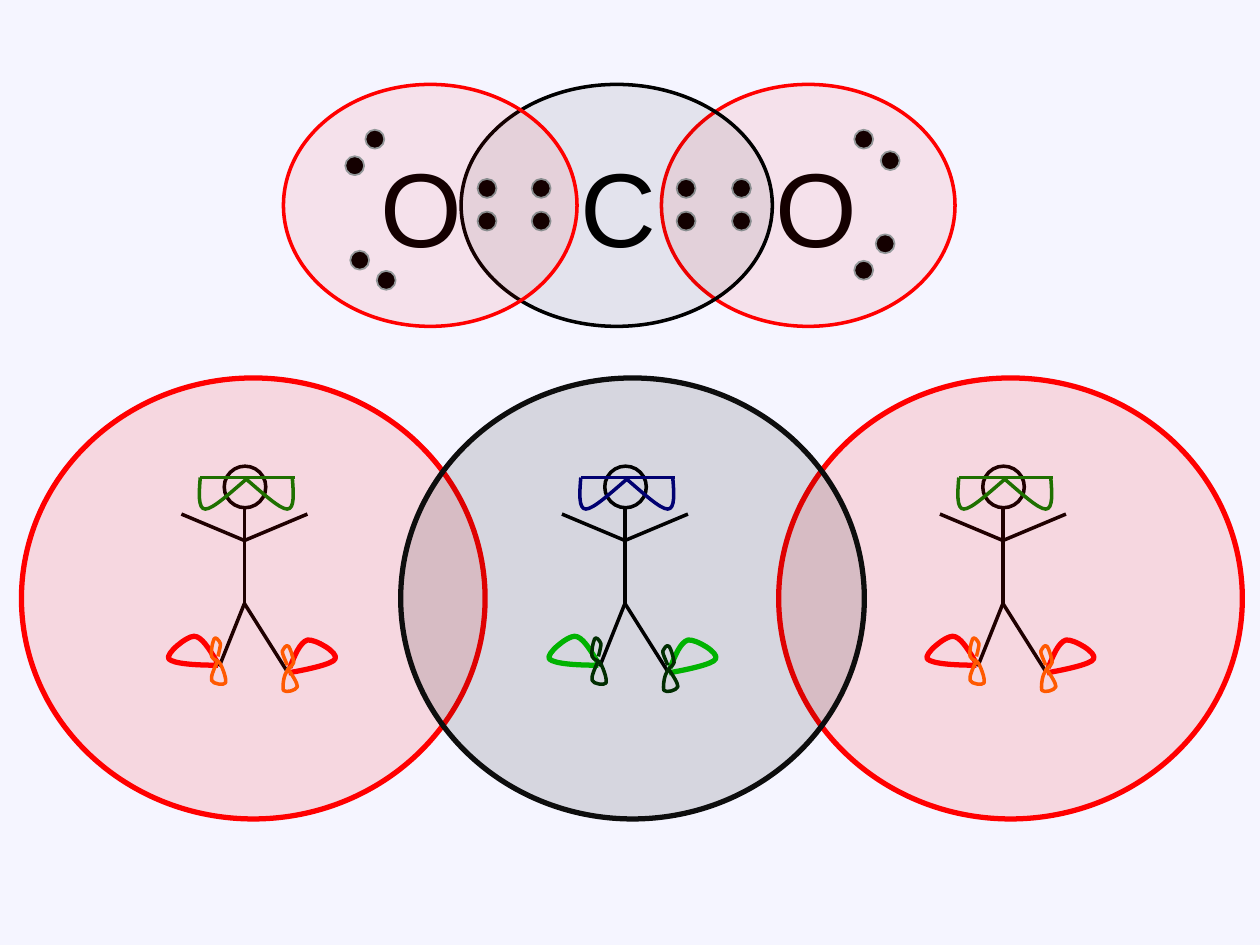
from lxml.etree import SubElement as Sub
from pptx import Presentation
from pptx.dml.color import RGBColor
from pptx.enum.shapes import MSO_CONNECTOR as Conn, MSO_SHAPE as Shape
from pptx.oxml.ns import qn
from pptx.util import Inches, Pt

BACK = RGBColor(0xF5, 0xF5, 0xFF)
BLACK = RGBColor(0, 0, 0)
COAL = RGBColor(0x0D, 0x0D, 0x0D)
RED = RGBColor(0xFF, 0, 0)
GREY = RGBColor(0x8A, 0xA6, 0xA8)
LIME = RGBColor(0, 0xCC, 0)
PINE = RGBColor(0, 0x33, 0)
NAVY = RGBColor(0, 0, 0x80)
ORANGE = RGBColor(0xFF, 0x66, 0)
GREEN = RGBColor(0, 0x80, 0)

LETTERS = [("C", 4.51, 0.81), ("O", 2.92, 0.86), ("O", 6.06, 0.86)]
LONE = [(6.78, 1.03), (6.99, 1.2), (6.95, 1.86), (6.78, 2.07),
        (2.9, 1.03), (2.74, 1.24), (2.99, 2.15), (2.78, 1.99)]
BONDS = [(x, y) for x in (5.37, 5.81, 3.79, 4.22) for y in (1.42, 1.68)]

LIMBS = [((0, 4.04), (0, 4.79)), ((0, 4.79), (0.34, 5.33)),
         ((0, 4.79), (-0.2, 5.29)), ((0, 4.29), (0.5, 4.08)),
         ((0, 4.29), (-0.5, 4.08))]
LENS = [(-0.35, 3.79), (-0.36, 3.91), (-0.37, 4.04), (-0.31, 4.04),
        (-0.25, 4.04), (-0.11, 3.91), (0.03, 3.79)]
SHOES = [
    [(0.36, 5.3), (0.4, 5.2), (0.44, 5.1), (0.5, 5.08), (0.56, 5.07),
     (0.75, 5.18), (0.72, 5.23), (0.7, 5.27), (0.52, 5.31), (0.35, 5.34)],
    [(-0.22, 5.25), (-0.28, 5.15), (-0.34, 5.05), (-0.4, 5.05), (-0.46, 5.05),
     (-0.63, 5.19), (-0.6, 5.23), (-0.56, 5.27), (-0.38, 5.28), (-0.21, 5.28)],
]
BOWS = [
    [(0.34, 5.28), (0.32, 5.23), (0.3, 5.19), (0.3, 5.17), (0.31, 5.15),
     (0.33, 5.11), (0.35, 5.13), (0.36, 5.14), (0.39, 5.22), (0.39, 5.26),
     (0.38, 5.29), (0.34, 5.3), (0.33, 5.34), (0.31, 5.37), (0.3, 5.46),
     (0.31, 5.48), (0.33, 5.5), (0.41, 5.48), (0.42, 5.45), (0.42, 5.42),
     (0.38, 5.36), (0.34, 5.3)],
    [(-0.21, 5.21), (-0.2, 5.17), (-0.19, 5.13), (-0.19, 5.11), (-0.2, 5.08),
     (-0.23, 5.05), (-0.24, 5.07), (-0.25, 5.09), (-0.27, 5.17), (-0.26, 5.21),
     (-0.25, 5.24), (-0.2, 5.24), (-0.19, 5.27), (-0.17, 5.31), (-0.14, 5.39),
     (-0.15, 5.42), (-0.16, 5.44), (-0.25, 5.43), (-0.26, 5.4), (-0.27, 5.37),
     (-0.24, 5.31), (-0.21, 5.24)],
]


def add_oval(shapes, box, ink, width, fill=None, alpha=100):
    """Add an ellipse with an outline and an optional clear fill."""
    oval = shapes.add_shape(Shape.OVAL, *map(Inches, box))
    oval.shadow.inherit = False
    oval.line.color.rgb = ink
    oval.line.width = Pt(width)
    if fill is None:
        oval.fill.background()
        return
    oval.fill.solid()
    oval.fill.fore_color.rgb = fill
    if alpha < 100:
        tint = oval.element.spPr.find(qn("a:solidFill"))[0]
        Sub(tint, qn("a:alpha"), val=str(alpha * 1000))


def add_line(shapes, start, end, ink):
    """Add a straight line between two points."""
    line = shapes.add_connector(Conn.STRAIGHT, *map(Inches, start + end))
    line.line.color.rgb = ink
    line.line.width = Pt(2)
    Sub(line.element.spPr, qn("a:effectLst"))


def add_curve(shapes, points, ink, width):
    """Add an open Bezier outline from a start and triples of points."""
    spots = [(Inches(x), Inches(y)) for x, y in points]
    pen = shapes.build_freeform(*spots[0], scale=1.0)
    pen.add_line_segments(spots[1:], close=False)
    curve = pen.convert_to_shape()
    curve.shadow.inherit = False
    curve.fill.background()
    curve.line.color.rgb = ink
    curve.line.width = Pt(width)
    track = next(curve.element.iter(qn("a:path")))
    steps = track.findall(qn("a:lnTo"))
    for i in range(0, len(steps), 3):
        bend = Sub(track, qn("a:cubicBezTo"))
        for step in steps[i:i + 3]:
            bend.append(step[0])
            track.remove(step)


def add_letter(shapes, text, left, width):
    """Add the symbol of an atom."""
    box = shapes.add_textbox(*map(Inches, (left, 1.08, width, 1.11)))
    box.text_frame.word_wrap = False
    run = box.text_frame.paragraphs[0].add_run()
    run.text = text
    run.font.size = Pt(60)
    run.font.name = "Arial"
    run.font.color.rgb = BLACK


def add_atoms(slide):
    """Add the symbols and electrons of the molecule."""
    shapes = slide.shapes.add_group_shape().shapes
    for letter in LETTERS:
        add_letter(shapes, *letter)
    for x, y in LONE + BONDS:
        add_oval(shapes, (x, y, 0.15, 0.15), GREY, 1, BLACK)


def add_diver(slide, mid, shoe, bow, mask):
    """Add a stick figure with goggles and flippers."""
    shapes = slide.shapes.add_group_shape().shapes

    def place(points):
        """Move points to the middle of the figure."""
        return [(mid + x, y) for x, y in points]

    add_oval(shapes, (mid - 0.16, 3.7, 0.33, 0.33), BLACK, 2)
    for limb in LIMBS:
        add_line(shapes, *place(limb), BLACK)
    for fin, knot in zip(SHOES, BOWS):
        add_curve(shapes, place(fin), shoe, 3)
        add_curve(shapes, place(knot), bow, 2)
    add_line(shapes, *place([(-0.35, 3.79), (0.4, 3.79)]), mask)
    add_curve(shapes, place(LENS), mask, 2)
    add_curve(shapes, place([(0.03 - x, y) for x, y in LENS]), mask, 2)


def main():
    """Build the slide and save it."""
    deck = Presentation()
    deck.slide_width, deck.slide_height = Inches(10), Inches(7.5)
    slide = deck.slides.add_slide(deck.slide_layouts[6])
    slide.background.fill.solid()
    slide.background.fill.fore_color.rgb = BACK
    shapes = slide.shapes

    add_atoms(slide)
    add_oval(shapes, (5.25, 0.67, 2.33, 1.92), RED, 2, RED, 8)
    add_oval(shapes, (3.66, 0.67, 2.47, 1.92), BLACK, 2, BLACK, 7)
    add_diver(slide, 4.96, LIME, PINE, NAVY)
    for mid in (7.96, 1.94):
        add_diver(slide, mid, RED, ORANGE, GREEN)
    for left, ink, alpha in ((6.18, RED, 12), (0.17, RED, 12), (3.18, COAL, 13)):
        add_oval(shapes, (left, 3, 3.68, 3.5), ink, 3, ink, alpha)
    add_oval(shapes, (2.25, 0.67, 2.33, 1.92), RED, 2, RED, 8)
    deck.save("out.pptx")


if __name__ == "__main__":
    main()
